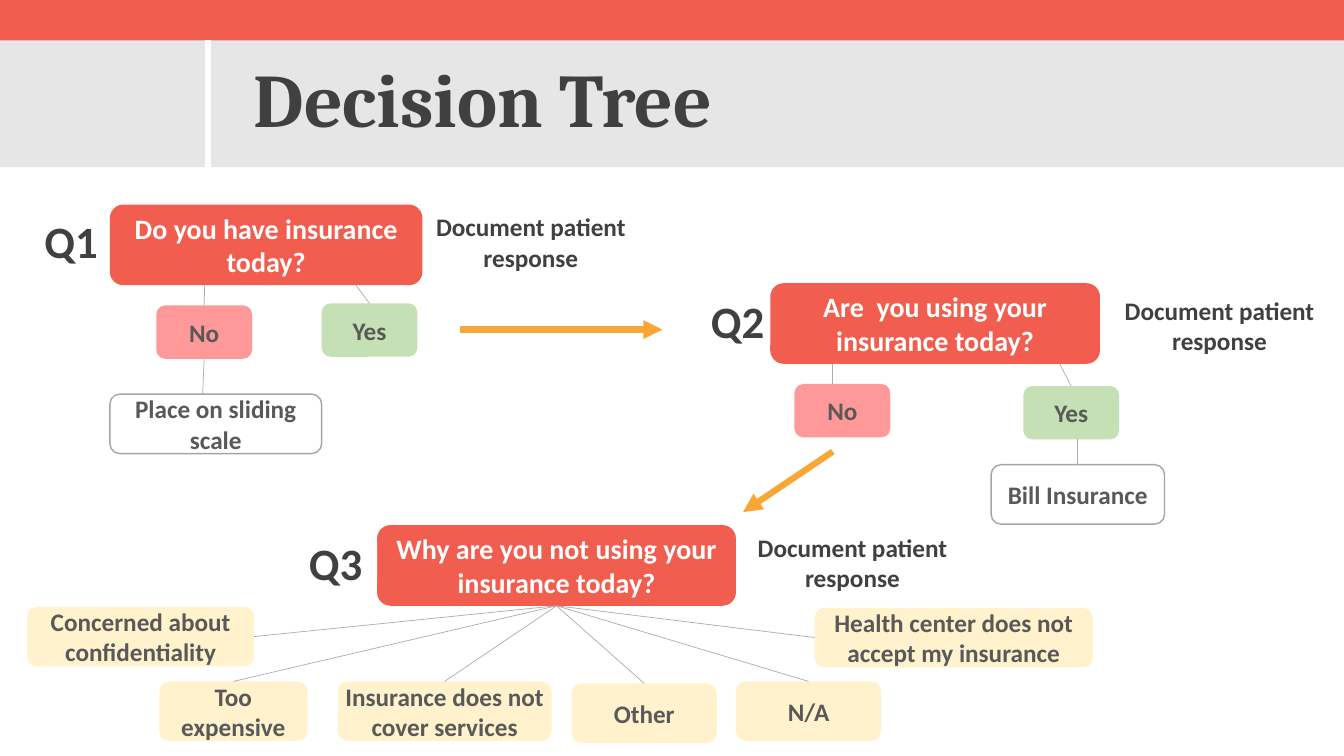
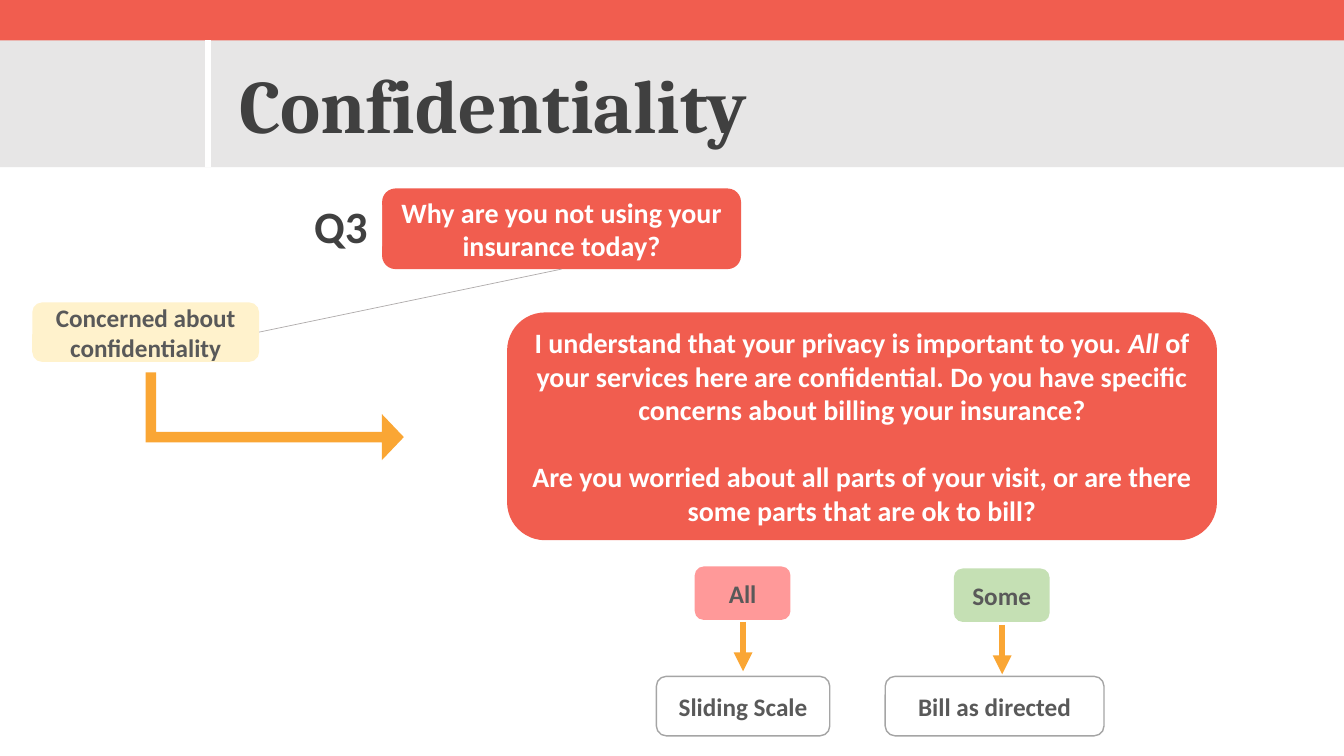
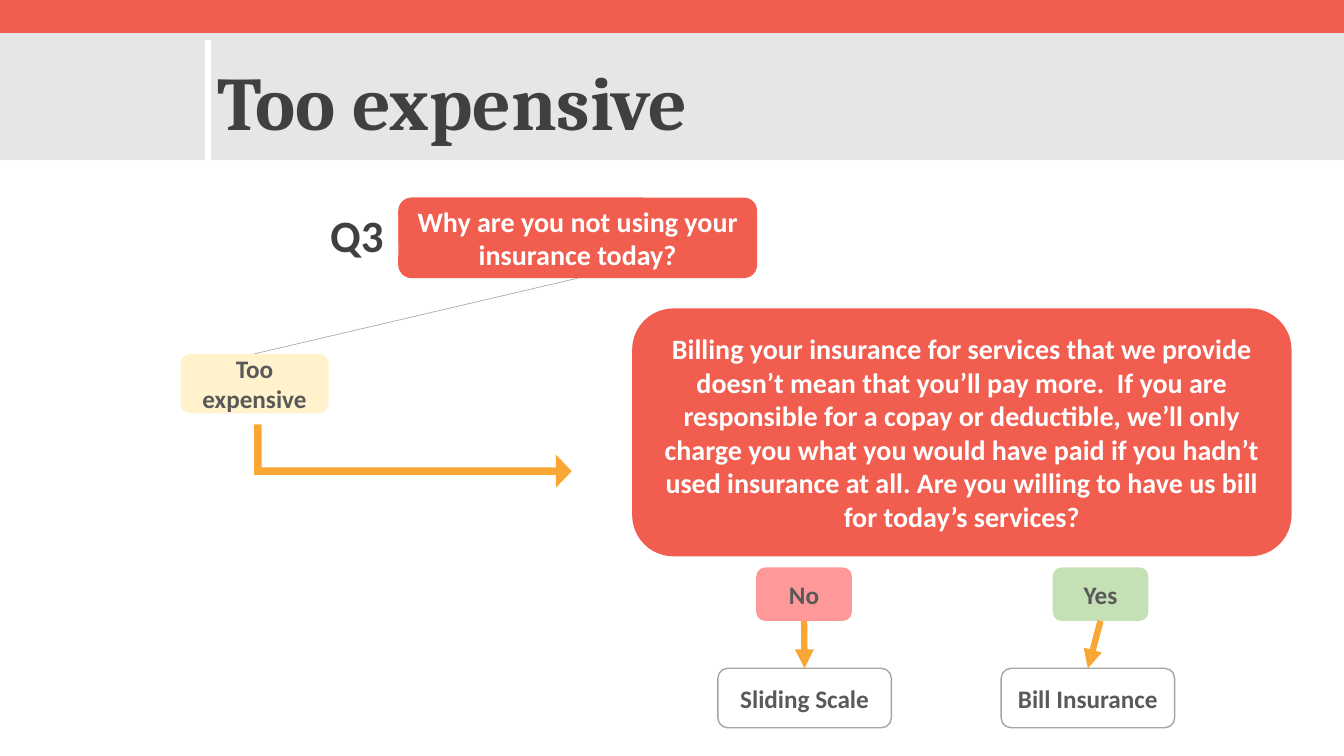
from lxml import etree
from pptx import Presentation
from pptx.dml.color import RGBColor
from pptx.enum import shapes, text
from pptx.oxml import ns
from pptx.util import Inches, Pt

CORAL, GREY, WHITE, ORANGE = "F15D4F", "E7E6E6", "FFFFFF", "FAA634"
DARK, TEXT_GREY, CREAM = "404040", "595959", "FFF2CC"
ROUND, RECT = shapes.MSO_SHAPE.ROUNDED_RECTANGLE, shapes.MSO_SHAPE.RECTANGLE
TOP, LEFT, BOTTOM, RIGHT = range(4)
SLIDE_WIDTH = 13.33

# Box styles: defaults first, then what differs
BASE = dict(shape=ROUND, fill=WHITE, line=None, color=TEXT_GREY, size=18,
            width=0.95, height=0.59, inset=(0.1, 0.05), gap=0)
STYLES = {
    "question": BASE | dict(fill=CORAL, color=WHITE, size=20, width=3.56, height=0.8),
    "script": BASE | dict(fill=CORAL, color=WHITE, size=20, gap=24),
    "label": BASE | dict(color=DARK, size=32, width=0.82, height=0.6, inset=(0, 0.05)),
    "note": BASE | dict(shape=RECT, color=DARK, width=2.01, height=0.6, inset=(0, 0)),
    "yes": BASE | dict(fill="C5E0B4", height=0.53),
    "no": BASE | dict(fill="FF9999", height=0.53),
    "result": BASE | dict(line="A5A5A5", width=1.72),
    "reason": BASE | dict(fill=CREAM),
    "tight reason": BASE | dict(fill=CREAM, inset=(0, 0.05)),
}
# Connector styles: colour, width in points, arrowhead
LINKS = {"branch": ("AFABAB", 0.5, False), "arrow": (ORANGE, 4.5, True)}

NOTE = "Document patient response"


def q3(left, top):
    """The third question with its label on the left."""
    return [
        ("q3", "question", "Why are you not using your\ninsurance today?", left, top),
        ("q3 label", "label", "Q3", left - 0.82, top + 0.07),
    ]


# Boxes: name, style, text, left, top, width (if not the style's own)
# Links: style, start, end; an end is a point or (box name, side)
SLIDES = [
    dict(
        title="Decision Tree", title_at=(2.42, 0.47), band_top=0.4,
        boxes=[
            ("q1 label", "label", "Q1", 0.32, 2.09, 0.77),
            ("q1", "question", "Do you have insurance today?", 1.09, 2.03, 3.1),
            ("q1 note", "note", NOTE, 4.26, 2.1),
            ("q1 no", "no", "No", 1.55, 3.03),
            ("q1 yes", "yes", "Yes", 3.19, 3.01),
            ("sliding scale", "result", "Place on sliding scale", 1.09, 3.91, 2.1),
            ("q2 label", "label", "Q2", 6.99, 2.88, 0.65),
            ("q2", "question", "Are  you using your insurance today?", 7.64, 2.81, 3.27),
            ("q2 note", "note", NOTE, 11.09, 2.93),
            ("q2 no", "no", "No", 7.88, 3.81),
            ("q2 yes", "yes", "Yes", 10.15, 3.83),
            ("bill", "result", "Bill Insurance", 9.83, 4.61),
            *q3(3.74, 5.21),
            ("q3 note", "note", NOTE, 7.45, 5.28),
            ("concerned", "reason", "Concerned about confidentiality", 0.27, 6.02, 2.25),
            ("expensive", "reason", "Too expensive", 1.58, 6.76, 1.47),
            ("not covered", "tight reason", "Insurance does not cover services", 3.35, 6.76, 2.12),
            ("other", "reason", "Other", 5.67, 6.78, 1.44),
            ("n/a", "reason", "N/A", 7.3, 6.76, 1.44),
            ("not accepted", "reason", "Health center does not accept my insurance", 8.08, 6.03, 2.76),
        ],
        links=[
            ("branch", (2.03, 2.83), ("q1 no", TOP)),
            ("branch", (3.53, 2.83), ("q1 yes", TOP)),
            ("branch", ("q1 no", BOTTOM), (2.01, 3.91)),
            ("branch", (8.26, 3.61), (8.26, 3.81)),
            ("branch", (10.51, 3.61), ("q2 yes", TOP)),
            ("branch", (10.69, 4.36), ("bill", TOP)),
            ("arrow", (4.56, 3.27), (6.57, 3.27)),
            ("arrow", (8.26, 4.48), (7.37, 5.08)),
            *[("branch", ("q3", BOTTOM), end) for end in (
                ("concerned", RIGHT), ("expensive", TOP), ("not covered", TOP),
                ("other", TOP), ("n/a", TOP), ("not accepted", LEFT))],
        ],
    ),
    dict(
        title="Confidentiality", title_at=(2.28, 0.53), band_top=0.4,
        boxes=[
            *q3(3.79, 1.87),
            ("concerned", "reason", "Concerned about confidentiality", 0.32, 3, 2.25),
            ("script", "script",
             "I understand that your privacy is important to you. *All* of your services here are "
             "confidential. Do you have specific concerns about billing your insurance?\n"
             "Are you worried about all parts of your visit, or are there some parts that are ok "
             "to bill?", 5.03, 3.1, 7.04, 2.26),
            ("all", "no", "All", 6.89, 5.62),
            ("some", "yes", "Some", 9.46, 5.64),
            ("sliding scale", "result", "Sliding Scale", 6.51, 6.71),
            ("bill", "result", "Bill as directed", 8.78, 6.71, 2.17),
        ],
        links=[
            ("branch", ("q3", BOTTOM), ("concerned", RIGHT)),
            ("arrow", (7.37, 6.17), (7.37, 6.66)),
            ("arrow", (9.94, 6.2), (9.94, 6.69)),
        ],
        bent_arrow=(2.29, 2.85, 0.87, 2.56),
    ),
    dict(
        title="Too expensive", title_at=(2.06, 0.5), band_top=0.33,
        boxes=[
            *q3(3.95, 1.96),
            ("expensive", "reason", "Too expensive", 1.79, 3.51, 1.47),
            ("script", "script",
             "Billing your insurance for services that we provide doesn’t mean that you’ll pay "
             "more.  If you are responsible for a copay or deductible, we’ll only charge you what "
             "you would have paid if you hadn’t used insurance at all. Are you willing to have us "
             "bill for today’s services?", 6.27, 3.06, 6.54, 2.46),
            ("no", "no", "No", 7.5, 5.63),
            ("yes", "yes", "Yes", 10.44, 5.63),
            ("sliding scale", "result", "Sliding Scale", 7.12, 6.63),
            ("bill", "result", "Bill Insurance", 9.93, 6.63),
        ],
        links=[
            ("branch", ("q3", BOTTOM), ("expensive", TOP)),
            ("arrow", ("no", BOTTOM), ("sliding scale", TOP)),
            ("arrow", ("yes", BOTTOM), ("bill", TOP)),
        ],
        bent_arrow=(3.78, 2.95, 0.63, 3.15),
    ),
]


def rgb(value):
    return RGBColor.from_string(value)


def set_all(target, values):
    for name, value in values.items():
        setattr(target, name, value)


def add_panel(slide, kind, at, fill, line=None):
    shape = slide.shapes.add_shape(kind, *map(Inches, at))
    shape.shadow.inherit = False
    shape.fill.solid()
    shape.fill.fore_color.rgb = rgb(fill)
    if line:
        shape.line.color.rgb = rgb(line)
        shape.line.width = Pt(1)
    else:
        shape.line.fill.background()
    return shape


def add_run(paragraph, words, font, size, color, italic=False):
    run = paragraph.add_run()
    run.text = words
    set_all(run.font, dict(name=font, size=Pt(size), bold=True, italic=italic))
    run.font.color.rgb = rgb(color)


def add_box(slide, style, words, left, top, width=None, height=None):
    look = STYLES[style]
    at = (left, top, width or look["width"], height or look["height"])
    shape = add_panel(slide, look["shape"], at, look["fill"], look["line"])
    across, down = map(Inches, look["inset"])
    frame = shape.text_frame
    set_all(frame, dict(margin_left=across, margin_right=across, margin_top=down,
                        margin_bottom=down, word_wrap=True,
                        vertical_anchor=text.MSO_ANCHOR.MIDDLE))
    for index, line in enumerate(words.split("\n")):
        paragraph = frame.add_paragraph() if index else frame.paragraphs[0]
        paragraph.alignment = text.PP_ALIGN.CENTER
        if index:
            paragraph.space_before = Pt(look["gap"])
        # Words between asterisks are italic
        for part, piece in enumerate(line.split("*")):
            add_run(paragraph, piece, "Calibri", look["size"], look["color"], part % 2 == 1)
    return shape


def add_line(slide, start, end, color, width, arrow=False, boxes=None):
    joined = [isinstance(point[0], str) for point in (start, end)]
    points = [(0, 0) if join else point for join, point in zip(joined, (start, end))]
    line = slide.shapes.add_connector(
        shapes.MSO_CONNECTOR.STRAIGHT, *[Inches(value) for point in points for value in point])
    for join, point, connect in zip(joined, (start, end), (line.begin_connect, line.end_connect)):
        if join:
            connect(boxes[point[0]], point[1])
    line.line.color.rgb = rgb(color)
    line.line.width = Pt(width)
    if arrow:
        etree.SubElement(line.line._get_or_add_ln(), ns.qn("a:tailEnd"), type="triangle")
    etree.SubElement(line._element.spPr, ns.qn("a:effectLst"))


def add_header(slide, title, title_at, band_top):
    add_panel(slide, RECT, (0, 0, SLIDE_WIDTH, 0.86), CORAL)
    add_panel(slide, RECT, (0, band_top, SLIDE_WIDTH, 1.26), GREY)
    box = slide.shapes.add_textbox(*map(Inches, (*title_at, 9.5, 1.01)))
    box.text_frame.word_wrap = True
    add_run(box.text_frame.paragraphs[0], title, "Cambria", 54, DARK)
    add_line(slide, (2.06, 0.4), (2.06, 1.66), WHITE, 4.5)


def add_bent_arrow(slide, at):
    arrow = add_panel(slide, shapes.MSO_SHAPE.BENT_UP_ARROW, at, ORANGE)
    arrow.rotation = 90
    for index, value in enumerate((0.118, 0.262, 0.25)):
        arrow.adjustments[index] = value


def main():
    presentation = Presentation()
    set_all(presentation, dict(slide_width=Inches(SLIDE_WIDTH), slide_height=Inches(7.5)))
    for content in SLIDES:
        slide = presentation.slides.add_slide(presentation.slide_layouts[6])
        add_header(slide, content["title"], content["title_at"], content["band_top"])
        boxes = {name: add_box(slide, *rest) for name, *rest in content["boxes"]}
        for style, start, end in content["links"]:
            add_line(slide, start, end, *LINKS[style], boxes)
        if "bent_arrow" in content:
            add_bent_arrow(slide, content["bent_arrow"])
    presentation.save("out.pptx")


if __name__ == "__main__":
    main()
